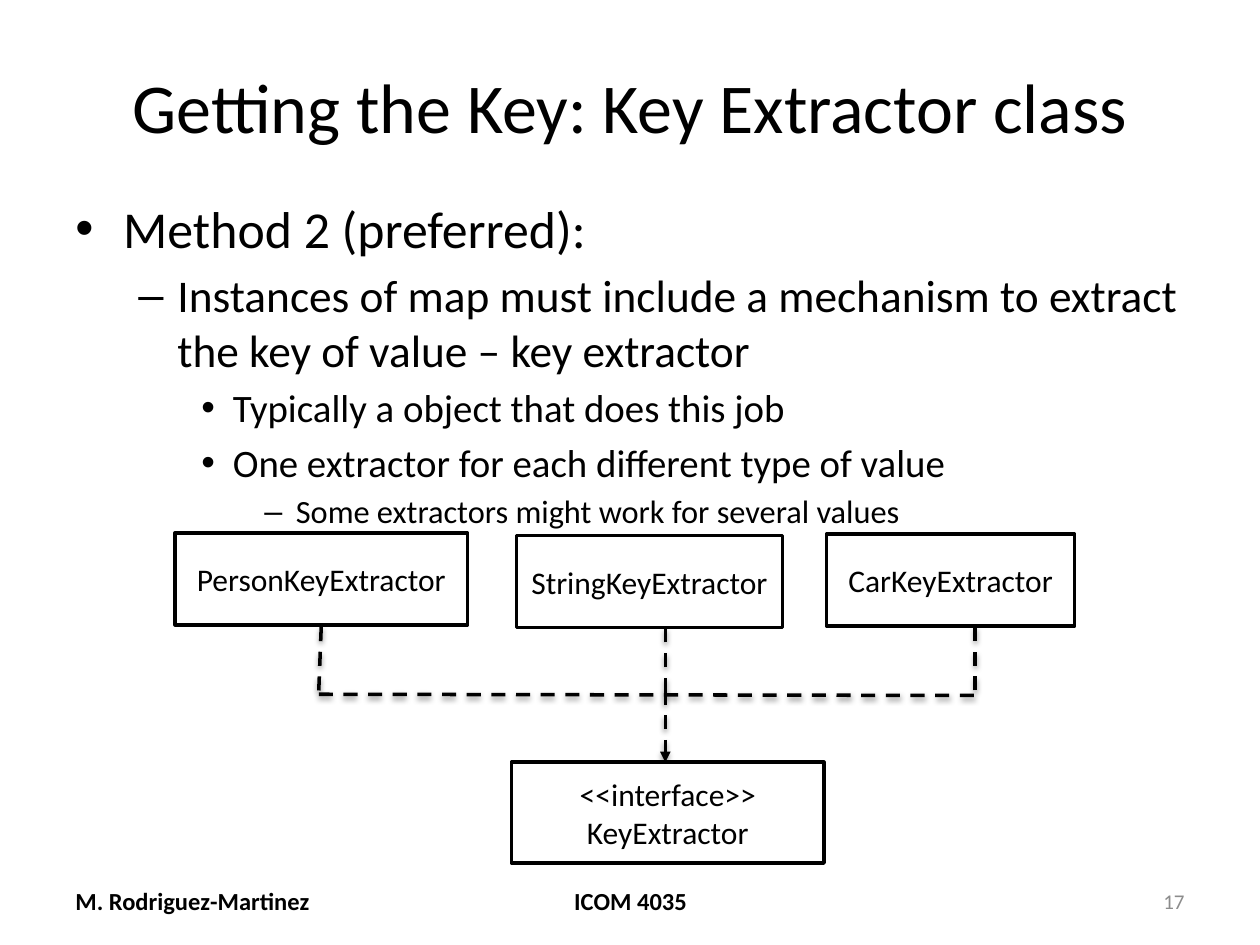
from lxml.etree import SubElement
from pptx import Presentation
from pptx.dml.color import RGBColor
from pptx.enum.dml import MSO_LINE
from pptx.enum.shapes import MSO_CONNECTOR, MSO_SHAPE
from pptx.enum.text import MSO_ANCHOR, PP_ALIGN
from pptx.oxml.ns import qn
from pptx.util import Inches, Pt

COLUMNS, ROWS = 100, 75


def color(hex_string):
    return RGBColor.from_string(hex_string)


def add_xml(parent, tag, **attributes):
    values = {name: str(value) for name, value in attributes.items()}
    return SubElement(parent, qn(tag), values)


class SlideBuilder:
    """Places elements on a slide divided into COLUMNS by ROWS cells."""

    font = "Calibri"
    ink = "000000"
    paper = "FFFFFF"
    line_width = 2
    # Level: text size, left indent and hanging indent in inches, bullet
    levels = [
        (29.6, 0.38, 0.38, "•"),
        (25.9, 0.81, 0.31, "–"),
        (22.2, 1.25, 0.25, "•"),
        (18.5, 1.75, 0.25, "–"),
    ]

    def __init__(self, presentation):
        self.column = presentation.slide_width / COLUMNS
        self.row = presentation.slide_height / ROWS
        self.slide = presentation.slides.add_slide(presentation.slide_layouts[6])

    def place(self, column, row):
        return round(column * self.column), round(row * self.row)

    def style(self, paragraph, size, ink=None, bold=False, align=PP_ALIGN.LEFT):
        paragraph.alignment = align
        paragraph.font.name = self.font
        paragraph.font.size = Pt(size)
        paragraph.font.bold = bold
        paragraph.font.color.rgb = color(ink or self.ink)

    def fill_frame(self, frame, lines, size, **style):
        frame.word_wrap = True
        frame.vertical_anchor = MSO_ANCHOR.MIDDLE
        frame.text = "\n".join(lines)
        for paragraph in frame.paragraphs:
            self.style(paragraph, size, **style)

    def text(self, column, row, width, height, text, size, **style):
        box = self.slide.shapes.add_textbox(
            *self.place(column, row), *self.place(width, height))
        self.fill_frame(box.text_frame, [text], size, **style)

    def bullets(self, column, row, width, height, items):
        box = self.slide.shapes.add_textbox(
            *self.place(column, row), *self.place(width, height))
        frame = box.text_frame
        frame.word_wrap = True
        for index, (level, text) in enumerate(items):
            paragraph = frame.add_paragraph() if index else frame.paragraphs[0]
            size, left, hanging, bullet = self.levels[level]
            paragraph.text = text
            paragraph.level = level
            self.style(paragraph, size)
            paragraph.space_before = Pt(round(size * 0.2, 1))
            properties = paragraph._p.get_or_add_pPr()
            properties.set("marL", str(Inches(left)))
            properties.set("indent", str(-Inches(hanging)))
            bullet_font = add_xml(properties, "a:buFont", typeface="Arial")
            bullet_char = add_xml(properties, "a:buChar", char=bullet)
            # Bullets must precede the default run properties
            defaults = properties.find(qn("a:defRPr"))
            defaults.addprevious(bullet_font)
            defaults.addprevious(bullet_char)

    def class_box(self, column, row, width, height, *lines):
        shape = self.slide.shapes.add_shape(
            MSO_SHAPE.RECTANGLE,
            *self.place(column, row), *self.place(width, height))
        shape.shadow.inherit = False
        shape.fill.solid()
        shape.fill.fore_color.rgb = color(self.paper)
        shape.line.color.rgb = color(self.ink)
        shape.line.width = Pt(self.line_width)
        self.fill_frame(shape.text_frame, lines, 18, align=PP_ALIGN.CENTER)

    def dashed_line(self, start, end, arrow=False):
        connector = self.slide.shapes.add_connector(
            MSO_CONNECTOR.STRAIGHT, *self.place(*start), *self.place(*end))
        connector.line.color.rgb = color(self.ink)
        connector.line.width = Pt(self.line_width)
        connector.line.dash_style = MSO_LINE.DASH
        if arrow:
            add_xml(connector.line._get_or_add_ln(), "a:tailEnd", type="triangle")
        effects = add_xml(connector._element.spPr, "a:effectLst")
        shadow = add_xml(effects, "a:outerShdw", blurRad=Pt(3.1), dist=Pt(1.6),
                         dir=90 * 60000, rotWithShape=0)
        shade = add_xml(shadow, "a:srgbClr", val=self.ink)
        add_xml(shade, "a:alpha", val=38000)


def main():
    presentation = Presentation()
    presentation.slide_width = Inches(10)
    presentation.slide_height = Inches(7.5)
    builder = SlideBuilder(presentation)

    builder.text(5, 3, 90, 10.7, "Getting the Key: Key Extractor class", 40,
                 align=PP_ALIGN.CENTER)
    builder.bullets(5, 15.1, 90, 26.4, [
        (0, "Method 2 (preferred):"),
        (1, "Instances of map must include a mechanism to extract "
            "the key of value – key extractor"),
        (2, "Typically a object that does this job"),
        (2, "One extractor for each different type of value"),
        (3, "Some extractors might work for several values"),
    ])

    footer_row, footer_height = 69.5, 4
    builder.text(5, footer_row, 23.3, footer_height, "M. Rodriguez-Martinez", 14,
                 bold=True)
    builder.text(34.2, footer_row, 31.7, footer_height, "ICOM 4035", 14,
                 bold=True, align=PP_ALIGN.CENTER)
    builder.text(71.7, footer_row, 23.3, footer_height, "17", 12,
                 ink="8C8C8C", align=PP_ALIGN.RIGHT)

    bus_row, interface_row = 55.1, 60.5
    builder.dashed_line((25.3, bus_row), (77.3, bus_row + 0.1))
    builder.dashed_line((25.3, 54.8), (25.5, 49.6))
    builder.dashed_line((77.4, 54.8), (77.4, 49.5))
    builder.dashed_line((52.8, 54.9), (52.8, 49.5))
    builder.dashed_line((52.8, 54.8), (52.8, interface_row), arrow=True)

    builder.class_box(40.6, interface_row, 24.8, 8, "<<interface>>", "KeyExtractor")
    for column, row, width, name in [
        (13.9, 42.3, 23.2, "PersonKeyExtractor"),
        (41, 42.5, 21.1, "StringKeyExtractor"),
        (65.6, 42.4, 19.7, "CarKeyExtractor"),
    ]:
        builder.class_box(column, row, width, 7.3, name)

    presentation.save("out.pptx")


if __name__ == "__main__":
    main()
